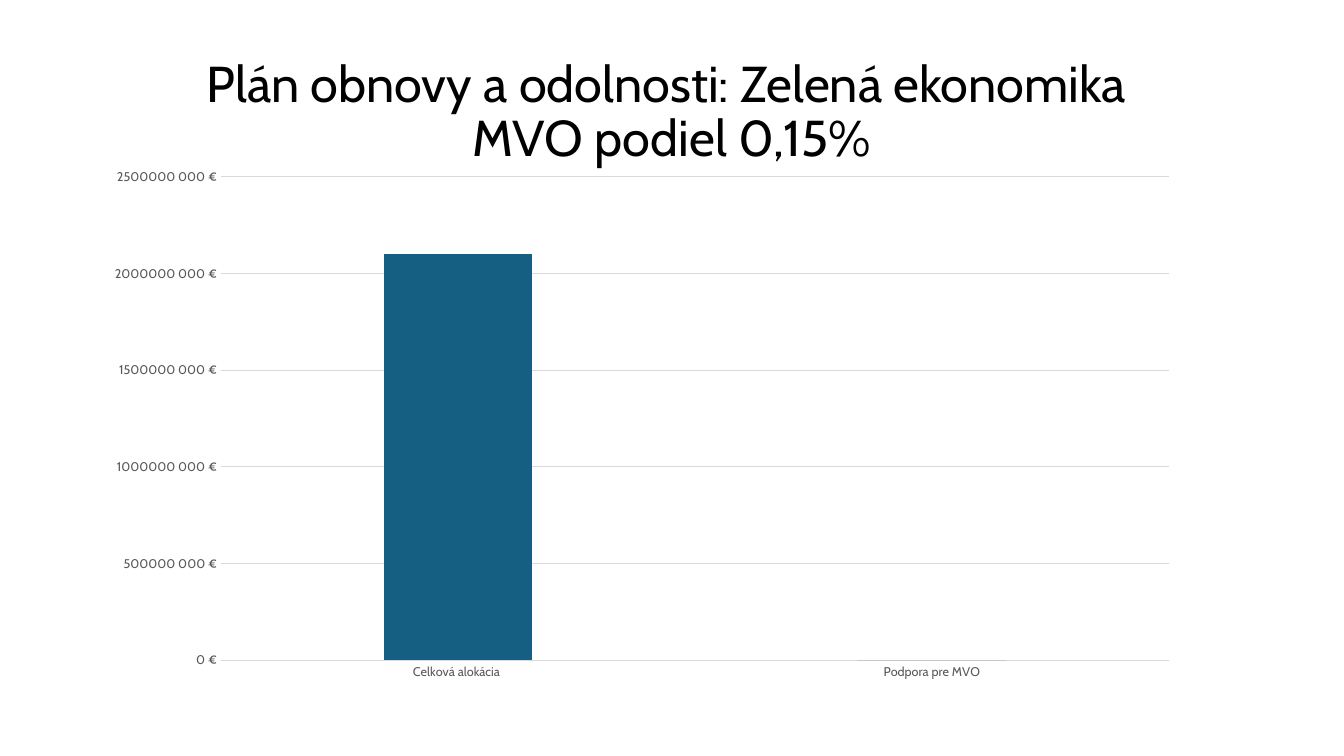
from dataclasses import dataclass

from pptx import Presentation
from pptx.chart.data import CategoryChartData
from pptx.dml.color import RGBColor
from pptx.enum.chart import XL_CHART_TYPE, XL_TICK_MARK
from pptx.enum.text import MSO_ANCHOR, MSO_AUTO_SIZE, PP_ALIGN
from pptx.util import Inches, Pt

COLUMNS = XL_CHART_TYPE.COLUMN_CLUSTERED
NO_TICKS = XL_TICK_MARK.NONE
MIDDLE = MSO_ANCHOR.MIDDLE
NO_AUTOFIT = MSO_AUTO_SIZE.NONE
CENTER = PP_ALIGN.CENTER
TITLE_ONLY = 5


@dataclass(frozen=True)
class Theme:
    font: str = "Cabin"
    text: str = "000000"
    axis_text: str = "595959"
    grid: str = "D9D9D9"
    bar: str = "156082"
    background: str = "FFFFFF"
    title_size: float = 36
    chart_size: float = 10
    axis_size: float = 9
    line_width: float = 0.75


def format_font(font, name, size, color):
    font.name = name
    font.size = Pt(size)
    font.bold = False
    font.color.rgb = RGBColor.from_string(color)


def write_text(frame, text, *, font, size, color, align=CENTER, spacing=1.0):
    """Fill a text frame with one formatted paragraph; a line feed breaks the line."""
    paragraph = frame.paragraphs[0]
    paragraph.text = text.replace("\n", "\v")
    paragraph.alignment = align
    paragraph.line_spacing = spacing
    for run in paragraph.runs:
        format_font(run.font, font, size, color)


class SlideBuilder:
    def __init__(self, presentation, theme):
        self.theme = theme
        self.width = presentation.slide_width
        self.height = presentation.slide_height
        self.slide = presentation.slides.add_slide(presentation.slide_layouts[TITLE_ONLY])
        fill = self.slide.background.fill
        fill.solid()
        fill.fore_color.rgb = RGBColor.from_string(theme.background)

    def box(self, left, top, width, height):
        """Turn shares of the slide's size into lengths."""
        return (round(left * self.width), round(top * self.height),
                round(width * self.width), round(height * self.height))

    def title(self, text, area):
        shape = self.slide.shapes.title
        shape.left, shape.top, shape.width, shape.height = self.box(*area)
        frame = shape.text_frame
        frame.word_wrap = True
        frame.auto_size = NO_AUTOFIT
        frame.vertical_anchor = MIDDLE
        write_text(frame, text, font=self.theme.font, size=self.theme.title_size,
                   color=self.theme.text, spacing=0.9)

    def style_line(self, line):
        line.color.rgb = RGBColor.from_string(self.theme.grid)
        line.width = Pt(self.theme.line_width)

    def style_axis(self, axis):
        axis.major_tick_mark = axis.minor_tick_mark = NO_TICKS
        format_font(axis.tick_labels.font, self.theme.font,
                    self.theme.axis_size, self.theme.axis_text)

    def column_chart(self, series_name, values, area, number_format):
        data = CategoryChartData()
        data.categories = list(values)
        data.add_series(series_name, list(values.values()))
        chart = self.slide.shapes.add_chart(COLUMNS, *self.box(*area), data).chart
        chart.has_title = chart.has_legend = False
        format_font(chart.font, self.theme.font, self.theme.chart_size, self.theme.text)

        category_axis, value_axis = chart.category_axis, chart.value_axis
        self.style_axis(category_axis)
        self.style_line(category_axis.format.line)
        self.style_axis(value_axis)
        value_axis.format.line.fill.background()
        value_axis.has_major_gridlines = True
        self.style_line(value_axis.major_gridlines.format.line)
        value_axis.tick_labels.number_format = number_format
        value_axis.tick_labels.number_format_is_linked = False

        plot = chart.plots[0]
        plot.gap_width = 219
        plot.overlap = -27
        plot.vary_by_categories = False
        fill = plot.series[0].format.fill
        fill.solid()
        fill.fore_color.rgb = RGBColor.from_string(self.theme.bar)


def main():
    presentation = Presentation()
    presentation.slide_width = Inches(13.33)
    presentation.slide_height = Inches(7.5)

    builder = SlideBuilder(presentation, Theme())
    margin = 0.92 / 13.33
    builder.title("Plán obnovy a odolnosti: Zelená ekonomika \nMVO podiel 0,15%",
                  (margin, 0.4 / 7.5, 1 - 2 * margin, 1.45 / 7.5))
    builder.column_chart("Series 1",
                         {"Celková alokácia ": 2_100_000_000, "Podpora pre MVO": 0},
                         (margin, 1.57 / 7.5, 10.89 / 13.33, 5.28 / 7.5),
                         r'#\ ##0\ "€"')
    presentation.save("out.pptx")


if __name__ == "__main__":
    main()
